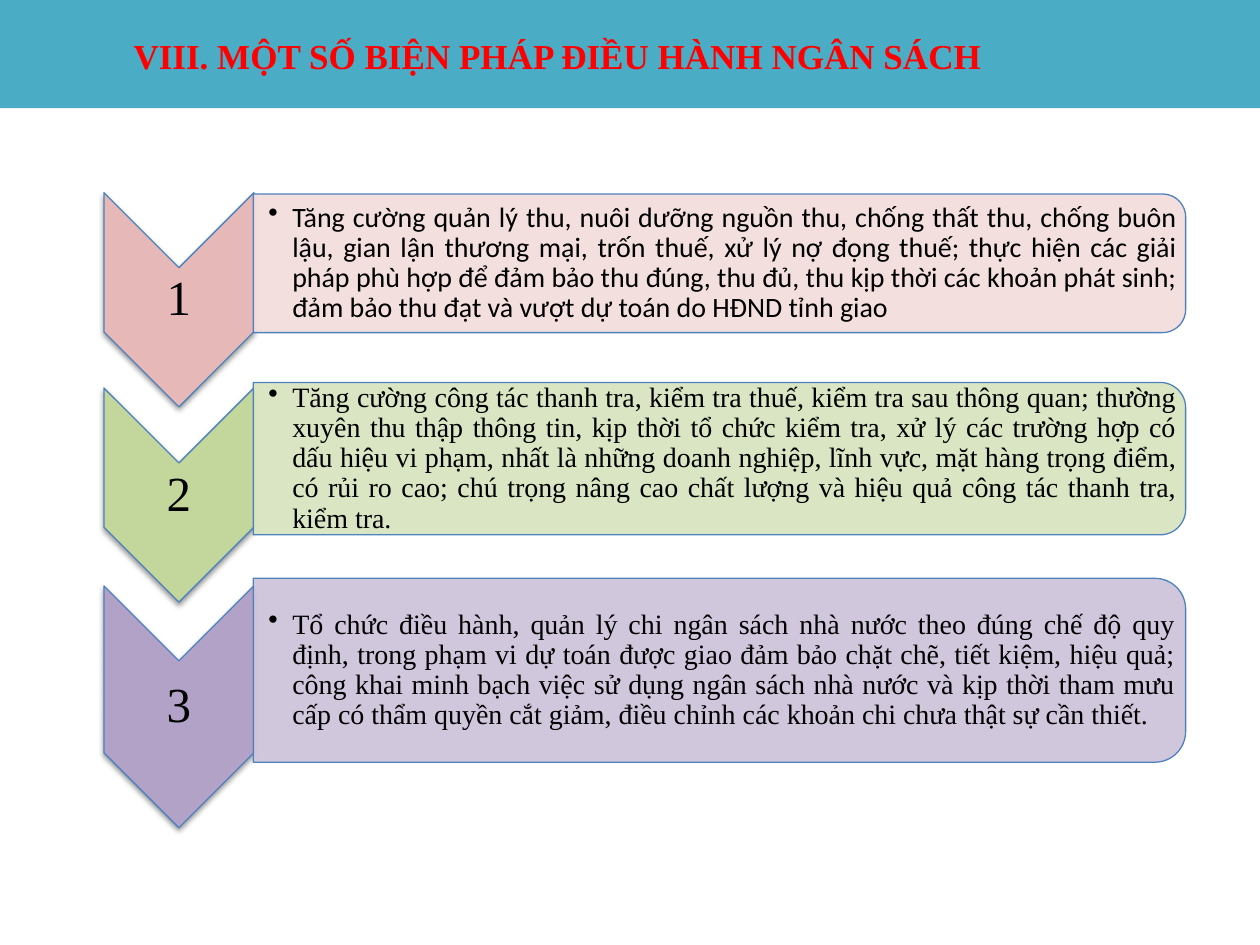
from lxml import etree
from pptx import Presentation
from pptx.dml.color import RGBColor
from pptx.enum.shapes import MSO_SHAPE
from pptx.enum.text import MSO_ANCHOR, MSO_AUTO_SIZE, PP_ALIGN
from pptx.oxml import parse_xml
from pptx.oxml.ns import nsdecls, qn
from pptx.util import Inches, Pt

CHEVRON, PANEL = MSO_SHAPE.CHEVRON, MSO_SHAPE.ROUND_2_SAME_RECTANGLE
CENTER, JUSTIFY, LEFT = PP_ALIGN.CENTER, PP_ALIGN.JUSTIFY, PP_ALIGN.LEFT
TOP, MIDDLE = MSO_ANCHOR.TOP, MSO_ANCHOR.MIDDLE

THEME = {
    "band": "4AACC5", "title": "FF0000", "text": "000000", "outline": "4F81BD",
    "serif": "Times New Roman", "sans": "Calibri",
    "title_size": 20, "number_size": 28, "body_size": 16,
}
SHADOW = (
    f'<a:outerShdw {nsdecls("a")} blurRad="{Pt(3.1)}" dist="{Pt(1.6)}" dir="5400000"'
    ' rotWithShape="0"><a:srgbClr val="000000"><a:alpha val="38000"/></a:srgbClr></a:outerShdw>'
)

CHEVRON_WIDTH, CHEVRON_CENTER, CHEVRON_DROP = 1.19, 1.42, 0.29
PANEL_LEFT, PANEL_WIDTH = 2.01, 7.4

# Panel centre, panel height, chevron length, chevron colour, panel colour, font, text
MEASURES = [
    (2.09, 1.10, 1.70, "E6B9B8", "F2DCDB", THEME["sans"],
     "Tăng cường quản lý thu, nuôi dưỡng nguồn thu, chống thất thu, chống buôn lậu, gian lận "
     "thương mại, trốn thuế, xử lý nợ đọng thuế; thực hiện các giải pháp phù hợp để đảm bảo thu "
     "đúng, thu đủ, thu kịp thời các khoản phát sinh; đảm bảo thu đạt và vượt dự toán do HĐND "
     "tỉnh giao"),
    (3.64, 1.21, 1.70, "C3D69B", "D7E4BD", THEME["serif"],
     "Tăng cường công tác thanh tra, kiểm tra thuế, kiểm tra sau thông quan; thường xuyên thu "
     "thập thông tin, kịp thời tổ chức kiểm tra, xử lý các trường hợp có dấu hiệu vi phạm, nhất "
     "là những doanh nghiệp, lĩnh vực, mặt hàng trọng điểm, có rủi ro cao; chú trọng nâng cao "
     "chất lượng và hiệu quả công tác thanh tra, kiểm tra."),
    (5.32, 1.46, 1.92, "B3A2C7", "CCC1DA", THEME["serif"],
     "Tổ chức điều hành, quản lý chi ngân sách nhà nước theo đúng chế độ quy định, trong phạm vi "
     "dự toán được giao đảm bảo chặt chẽ, tiết kiệm, hiệu quả; công khai minh bạch việc sử dụng "
     "ngân sách nhà nước và kịp thời tham mưu cấp có thẩm quyền cắt giảm, điều chỉnh các khoản "
     "chi chưa thật sự cần thiết."),
]


def add_turned_shape(kind, center_x, center_y, length, breadth, color):
    """Add a shape turned 90 degrees clockwise; length runs down the slide."""
    shape = slide.shapes.add_shape(
        kind, Inches(center_x - length / 2), Inches(center_y - breadth / 2),
        Inches(length), Inches(breadth))
    shape.rotation = 90
    shape.shadow.inherit = False
    shape.fill.solid()
    shape.fill.fore_color.rgb = RGBColor.from_string(color)
    shape.line.color.rgb = RGBColor.from_string(THEME["outline"])
    shape.line.width = Pt(0.75)
    return shape


def write_text(shape, text, font, size, color, align, anchor, margins, spacing, bold=False):
    """Fill a shape with one paragraph; margins are left, top, right, bottom."""
    frame = shape.text_frame
    frame.text = text
    frame.word_wrap = True
    frame.auto_size = MSO_AUTO_SIZE.NONE
    frame.vertical_anchor = anchor
    for side, margin in zip(("left", "top", "right", "bottom"), margins):
        setattr(frame, f"margin_{side}", Inches(margin))
    paragraph = frame.paragraphs[0]
    paragraph.alignment = align
    paragraph.line_spacing = spacing
    run_font = paragraph.runs[0].font
    for name, value in {"name": font, "size": Pt(size), "bold": bold}.items():
        setattr(run_font, name, value)
    run_font.color.rgb = RGBColor.from_string(color)
    return paragraph


presentation = Presentation()
presentation.slide_width, presentation.slide_height = Inches(10), Inches(7.5)
slide = presentation.slides.add_slide(presentation.slide_layouts[5])

band = slide.shapes.add_shape(MSO_SHAPE.RECTANGLE, 0, 0, Inches(10), Inches(0.86))
band.shadow.inherit = False
band.fill.solid()
band.fill.fore_color.rgb = RGBColor.from_string(THEME["band"])
band.line.fill.background()

title = slide.shapes.title
title.left, title.top, title.width, title.height = map(Inches, (0.5, 0.27, 9, 0.59))
write_text(title, "VIII. MỘT SỐ BIỆN PHÁP ĐIỀU HÀNH NGÂN SÁCH", THEME["serif"],
           THEME["title_size"], THEME["title"], LEFT, TOP, (0.56, 0, 0, 0), 1, bold=True)
band._element.addnext(title._element)  # keeps the title in front of the band

for number, measure in enumerate(MEASURES, start=1):
    center, height, length, chevron_color, panel_color, font, text = measure

    chevron_middle = center + CHEVRON_DROP
    chevron = add_turned_shape(
        CHEVRON, CHEVRON_CENTER, chevron_middle, length, CHEVRON_WIDTH, chevron_color)
    chevron._element.spPr.find(qn("a:effectLst")).append(parse_xml(SHADOW))

    label_height = length - CHEVRON_WIDTH
    label = slide.shapes.add_textbox(
        Inches(CHEVRON_CENTER - CHEVRON_WIDTH / 2), Inches(chevron_middle - label_height / 2),
        Inches(CHEVRON_WIDTH), Inches(label_height))
    write_text(label, str(number), THEME["serif"], THEME["number_size"], THEME["text"],
               CENTER, MIDDLE, (0.02,) * 4, 0.9)

    panel = add_turned_shape(
        PANEL, PANEL_LEFT + PANEL_WIDTH / 2, center, height, PANEL_WIDTH, panel_color)
    # The turned panel has its rounded end on the right
    panel_fill = panel._element.spPr.find(qn("a:solidFill"))
    etree.SubElement(panel_fill[0], qn("a:alpha"), val="90000")

    inset = height * 0.05  # room left by the rounded corners
    body = slide.shapes.add_textbox(
        Inches(PANEL_LEFT), Inches(center - height / 2 + inset),
        Inches(PANEL_WIDTH - inset), Inches(height - 2 * inset))
    paragraph = write_text(body, text, font, THEME["body_size"], THEME["text"],
                           JUSTIFY, MIDDLE, (0.12, 0.01, 0.01, 0.01), 0.9)
    properties = paragraph._p.get_or_add_pPr()
    properties.set("marL", str(Inches(0.19)))
    properties.set("indent", str(Inches(-0.19)))
    etree.SubElement(properties, qn("a:buChar"), char="•")

presentation.save("out.pptx")
